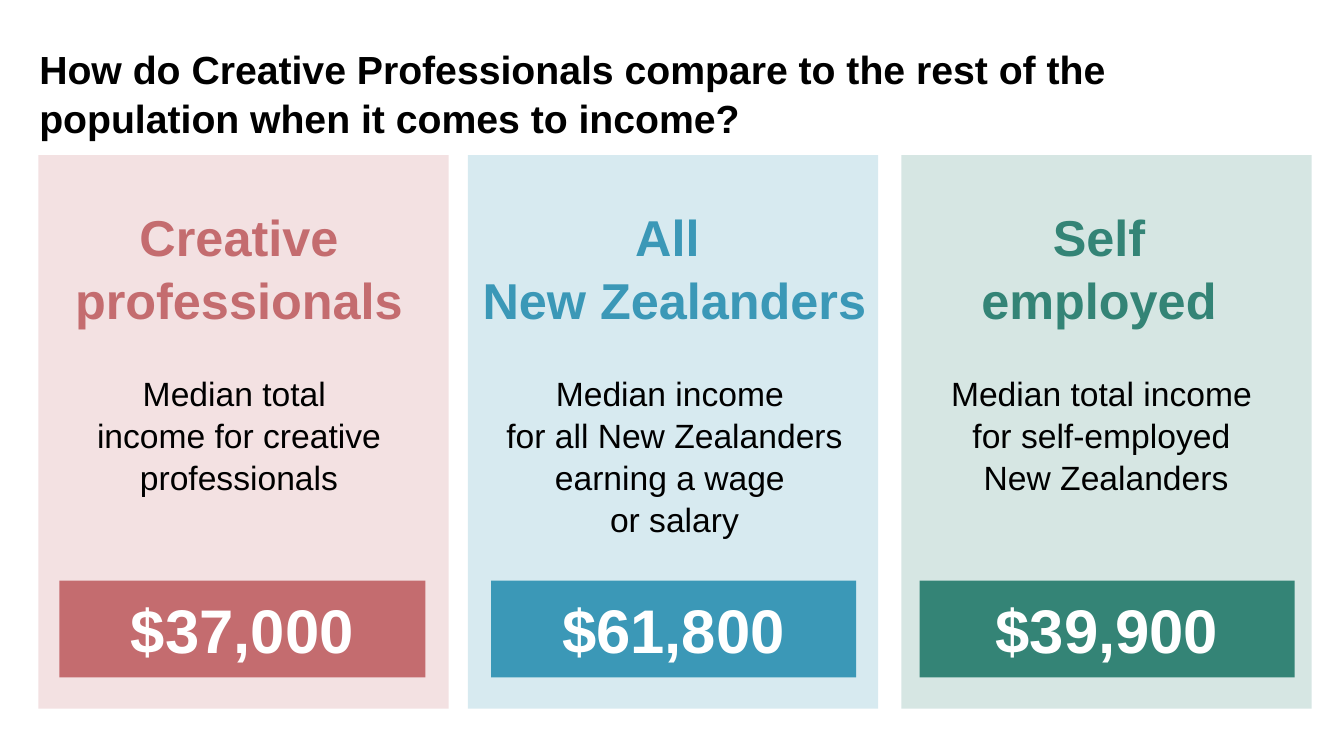
import pptx
import pptx.util
import pptx.dml.color
import pptx.enum.shapes
import pptx.enum.text
import pptx.oxml
import pptx.oxml.ns

Inches, Pt = pptx.util.Inches, pptx.util.Pt
RGB = pptx.dml.color.RGBColor.from_string
SHAPE = pptx.enum.shapes.MSO_SHAPE
ALIGN = pptx.enum.text.PP_ALIGN
ANCHOR = pptx.enum.text.MSO_ANCHOR

TITLE = "How do Creative Professionals compare to the rest of the population when it comes to income?"
CARDS = [
    {"heading": "Creative professionals",
     "detail": "Median total \vincome for creative professionals",
     "income": "$37,000", "color": "C46C6F",
     "left": 0.38, "text": (0.51, 3.72), "bar": (0.59, 3.63)},
    {"heading": "All \vNew Zealanders ",
     "detail": "Median income \vfor all New Zealanders earning a wage \vor salary",
     "income": "$61,800", "color": "3B98B7",
     "left": 4.64, "text": (4.76, 3.86), "bar": (4.87, 3.62)},
    {"heading": "Self \vemployed ",
     "detail": "Median total income \vfor self-employed \vNew Zealanders",
     "income": "$39,900", "color": "348476",
     "left": 8.94, "text": (9.11, 3.72), "bar": (9.12, 3.72)},
]
THEME = {"font": "Arial", "ink": "000000", "white": "FFFFFF", "tint": 20,
         "title": 28, "heading": 36, "detail": 24, "income": 44, "spacing": 1.04}


def box(left, top, width, height):
    return [Inches(v) for v in (left, top, width, height)]


def prepare(tf, anchor=ANCHOR.TOP):
    fmt = {"word_wrap": True, "vertical_anchor": anchor, "margin_left": 0,
           "margin_top": 0, "margin_right": 0, "margin_bottom": 0}
    for name, value in fmt.items():
        setattr(tf, name, value)
    return tf


def write(p, text, size, color, bold=True, **layout):
    p.text = text
    for name, value in layout.items():
        setattr(p, name, value)
    fmt = {"name": THEME["font"], "size": Pt(THEME[size]), "bold": bold}
    for r in p.runs:
        for name, value in fmt.items():
            setattr(r.font, name, value)
        r.font.color.rgb = RGB(color)


def add_block(s, kind, place, color, opacity=100):
    sp = s.shapes.add_shape(kind, *box(*place))
    sp.shadow.inherit = False
    sp.line.fill.background()
    sp.fill.solid()
    sp.fill.fore_color.rgb = RGB(color)
    if opacity < 100:
        clr = sp.fill._xPr.find(".//" + pptx.oxml.ns.qn("a:srgbClr"))
        alpha = pptx.oxml.parse_xml(
            f'<a:alpha {pptx.oxml.ns.nsdecls("a")} val="{opacity * 1000}"/>')
        clr.append(alpha)
    return sp


def add_card(s, card):
    color = card["color"]
    add_block(s, SHAPE.RECTANGLE, (card["left"], 1.54, 4.07, 5.49), color, THEME["tint"])

    left, width = card["text"]
    tf = prepare(s.shapes.add_textbox(*box(left, 2.02, width, 2.84)).text_frame)
    layout = {"alignment": ALIGN.CENTER, "line_spacing": THEME["spacing"]}
    write(tf.paragraphs[0], card["heading"], "heading", color, space_after=Pt(30), **layout)
    write(tf.add_paragraph(), card["detail"], "detail", THEME["ink"], False,
          space_after=Pt(6), **layout)

    left, width = card["bar"]
    bar = add_block(s, SHAPE.ROUNDED_RECTANGLE, (left, 5.76, width, 0.96), color)
    bar.adjustments[0] = 0
    tf = prepare(bar.text_frame, ANCHOR.MIDDLE)
    write(tf.paragraphs[0], card["income"], "income", THEME["white"], alignment=ALIGN.CENTER)


def main():
    prs = pptx.Presentation()
    prs.slide_width, prs.slide_height = Inches(13.33), Inches(7.5)
    s = prs.slides.add_slide(prs.slide_layouts[6])
    tf = prepare(s.shapes.add_textbox(*box(0.39, 0.43, 11.65, 0.44)).text_frame)
    write(tf.paragraphs[0], TITLE, "title", THEME["ink"],
          space_before=Pt(6), line_spacing=THEME["spacing"])
    for card in CARDS:
        add_card(s, card)
    prs.save("out.pptx")


if __name__ == "__main__":
    main()
